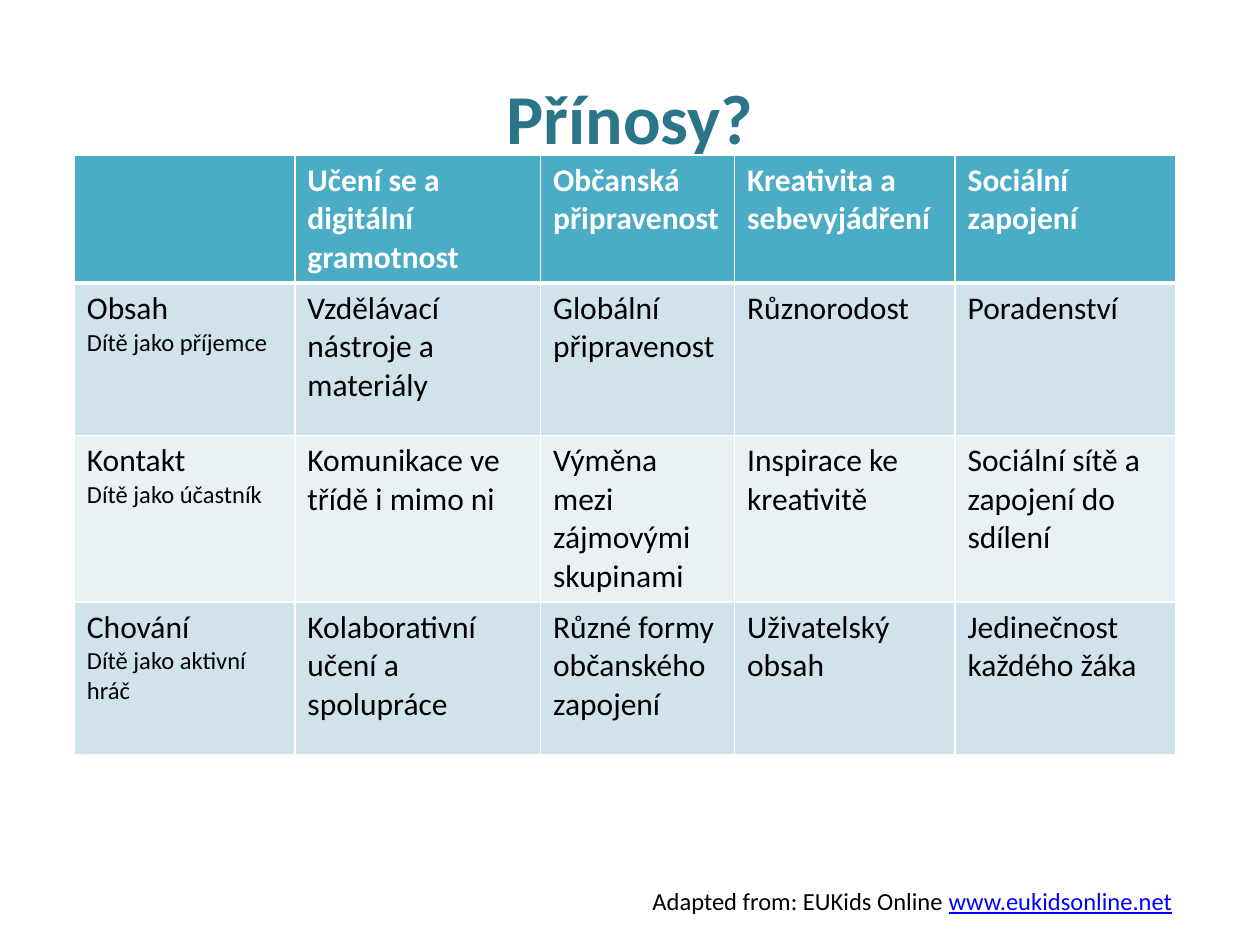
"""Build a one-page deck with a table of the benefits of going online."""
from dataclasses import dataclass

from lxml.etree import SubElement
from pptx import Presentation
from pptx.dml.color import RGBColor
from pptx.enum.text import MSO_ANCHOR as Anchor, MSO_AUTO_SIZE as AutoSize, PP_ALIGN as Align
from pptx.oxml.ns import qn
from pptx.slide import Slide
from pptx.table import _Cell as Cell
from pptx.text.text import Font
from pptx.util import Inches, Pt


@dataclass(frozen=True)
class Theme:
    """Colours, typeface and type sizes."""
    face: str = "Calibri"
    title: str = "2B7589"
    header: str = "4BACC6"
    bands: tuple[str, str] = ("D0E3EA", "E9F1F5")
    white: str = "FFFFFF"
    black: str = "000000"
    link: str = "0000FF"
    title_size: int = 40
    body_size: int = 18
    small_size: int = 14
    thin: int = 1
    thick: int = 3


@dataclass(frozen=True)
class Activity:
    """A table row: the activity, the role of the child and the benefits."""
    name: str
    role: str
    benefits: tuple[str, ...]


THEME = Theme()
COLUMN_WIDTHS = (1.75, 1.95, 1.54, 1.75, 1.75)
ROW_HEIGHTS = (0.97, 1.21, 1.21, 1.21)
HEADINGS = (
    "",
    "Učení se a digitální gramotnost",
    "Občanská připravenost",
    "Kreativita a sebevyjádření",
    "Sociální zapojení",
)
ACTIVITIES = (
    Activity("Obsah", "Dítě jako příjemce", (
        "Vzdělávací nástroje a materiály", "Globální připravenost",
        "Různorodost", "Poradenství")),
    Activity("Kontakt", "Dítě jako účastník", (
        "Komunikace ve třídě i mimo ni", "Výměna mezi zájmovými skupinami",
        "Inspirace ke kreativitě", "Sociální sítě a zapojení do sdílení")),
    Activity("Chování", "Dítě jako aktivní hráč", (
        "Kolaborativní učení a spolupráce", "Různé formy občanského zapojení",
        "Uživatelský obsah", "Jedinečnost každého žáka")),
)


def style(font: Font, size: int, color: str, bold: bool = False) -> None:
    """Set the face, size, colour and weight of a font."""
    font.name = THEME.face
    font.size = Pt(size)
    font.bold = bold
    font.color.rgb = RGBColor.from_string(color)


def draw_borders(cell: Cell, top: int, bottom: int) -> None:
    """Give a cell white borders, with the given top and bottom widths."""
    properties = cell._tc.get_or_add_tcPr()
    widths = {"a:lnL": THEME.thin, "a:lnR": THEME.thin, "a:lnT": top, "a:lnB": bottom}
    for tag, width in widths.items():
        line = SubElement(properties, qn(tag), w=str(Pt(width)))
        fill = SubElement(line, qn("a:solidFill"))
        SubElement(fill, qn("a:srgbClr"), val=THEME.white)


def fill_cell(cell: Cell, lines: tuple[str, ...], row: int) -> None:
    """Write a cell, its first line large and any further lines small."""
    header = row == 0
    draw_borders(cell, THEME.thick if row == 1 else THEME.thin,
                 THEME.thick if header else THEME.thin)
    cell.fill.solid()
    color = THEME.header if header else THEME.bands[(row - 1) % 2]
    cell.fill.fore_color.rgb = RGBColor.from_string(color)
    cell.text = "\n".join(lines)
    for index, para in enumerate(cell.text_frame.paragraphs):
        style(para.font, THEME.small_size if index else THEME.body_size,
              THEME.white if header else THEME.black, header)


def add_title(page: Slide) -> None:
    """Place and format the title."""
    title = page.shapes.title
    title.left, title.top = Inches(0.5), Inches(0.3)
    title.width, title.height = Inches(9), Inches(1.25)
    title.text_frame.text = "Přínosy?"
    title.text_frame.vertical_anchor = Anchor.MIDDLE
    para = title.text_frame.paragraphs[0]
    para.alignment = Align.CENTER
    style(para.font, THEME.title_size, THEME.title, True)


def add_benefits(page: Slide) -> None:
    """Draw the table of activities and benefits."""
    table = page.shapes.add_table(
        len(ROW_HEIGHTS), len(COLUMN_WIDTHS), Inches(0.59), Inches(1.23),
        Inches(sum(COLUMN_WIDTHS)), Inches(sum(ROW_HEIGHTS))).table
    for column, width in zip(table.columns, COLUMN_WIDTHS):
        column.width = Inches(width)
    for row, height in zip(table.rows, ROW_HEIGHTS):
        row.height = Inches(height)
    rows = [[(heading,) for heading in HEADINGS]]
    for activity in ACTIVITIES:
        rows.append([(activity.name, activity.role),
                     *((benefit,) for benefit in activity.benefits)])
    for row, contents in enumerate(rows):
        for column, lines in enumerate(contents):
            fill_cell(table.cell(row, column), lines, row)


def add_source(page: Slide) -> None:
    """Add the source line with its web address."""
    box = page.shapes.add_textbox(Inches(5.08), Inches(6.98), Inches(4.69), Inches(0.34))
    box.text_frame.word_wrap = True
    box.text_frame.auto_size = AutoSize.SHAPE_TO_FIT_TEXT
    para = box.text_frame.paragraphs[0]
    credit = para.add_run()
    credit.text = "Adapted from: EUKids Online "
    style(credit.font, THEME.small_size, THEME.black)
    address = para.add_run()
    address.text = "www.eukidsonline.net"
    style(address.font, THEME.small_size, THEME.link)
    address.font.underline = True


def main() -> None:
    """Build and save the deck."""
    deck = Presentation()
    deck.slide_width, deck.slide_height = Inches(10), Inches(7.5)
    page = deck.slides.add_slide(deck.slide_layouts.get_by_name("Title Only"))
    add_title(page)
    add_benefits(page)
    add_source(page)
    deck.save("out.pptx")


if __name__ == "__main__":
    main()
